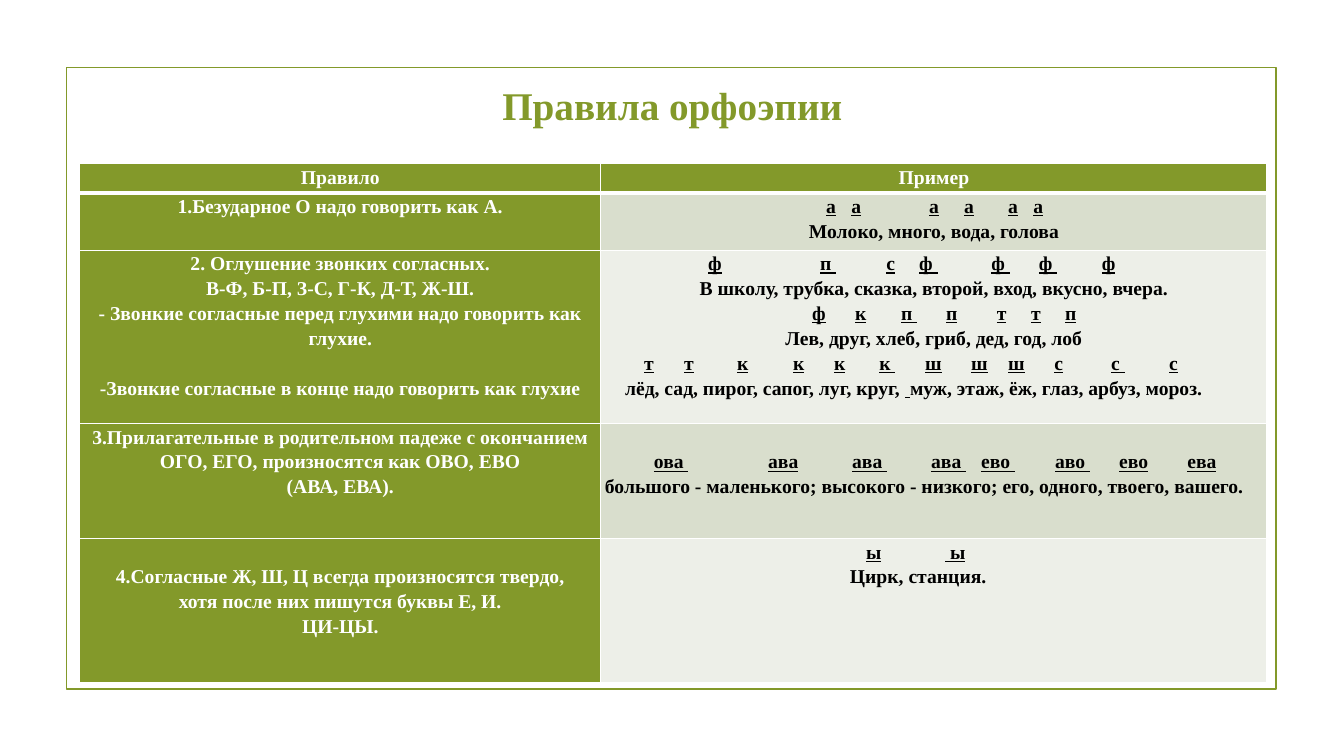
from dataclasses import dataclass
from typing import Optional

from lxml.etree import SubElement
from pptx import Presentation
from pptx.dml.color import RGBColor
from pptx.enum.shapes import MSO_SHAPE
from pptx.enum.text import MSO_ANCHOR, PP_ALIGN
from pptx.oxml import parse_xml
from pptx.oxml.ns import qn
from pptx.util import Pt

COLORS = {"green": "83992A", "white": "FFFFFF", "black": "000000",
          "dark": "D9DECD", "light": "EDEFE8"}
FONT = "Times New Roman"
NS = "http://schemas.openxmlformats.org/drawingml/2006/main"
PITCH = 17.7  # height of one line of table text
WIDTHS = (372.2, 475.9)
HEIGHTS = (20.9, 41, 123.8, 82.1, 103)


@dataclass
class Line:
    """A centred line, or pieces set at tab stops when stops are given."""
    pieces: tuple[str, ...]
    stops: tuple[float, ...] = ()
    under: bool = True
    gap: float = 0


@dataclass
class Cell:
    lines: list[Line]
    top: float = 0


def plain(*texts: str) -> list[Line]:
    return [Line((text,)) for text in texts]


def sounds(text: str, *stops: float) -> Line:
    """Underlined sounds, split at bars, each above its letter."""
    return Line(tuple(text.split("|")), stops)


ROWS = [
    (Cell(plain("Правило")), Cell(plain("Пример"))),
    (Cell(plain("1.Безударное О надо говорить как А.")),
     Cell([sounds("а|а|а|а|а|а", 158, 176, 231.5, 256.5, 288, 306),
           *plain("Молоко, много, вода, голова")])),
    (Cell([*plain("2. Оглушение звонких согласных.",
                  "В-Ф, Б-П, З-С, Г-К, Д-Т, Ж-Ш.",
                  "- Звонкие согласные перед глухими надо говорить как глухие."),
           Line(("-Звонкие согласные в конце надо говорить как глухие",), gap=PITCH)]),
     Cell([sounds("ф|п |с|ф |ф |ф |ф", 73.7, 153.7, 201, 224.4, 276, 310, 355),
           *plain("В школу, трубка, сказка, второй, вход, вкусно, вчера."),
           sounds("ф|к|п |п|т|т|п", 148, 178.7, 211.6, 243.7, 280, 304.4, 328.7),
           *plain("Лев, друг, хлеб, гриб, дед, год, лоб"),
           sounds("т|т|к|к|к|к |ш|ш|ш|с|с |с", 28, 56.6, 94.4, 134.4, 163.7, 196,
                  228.7, 261.6, 288, 321, 361.6, 403),
           Line(("лёд, сад, пирог, сапог, луг, круг,",
                 "муж, этаж, ёж, глаз, арбуз, мороз."), (14.4, 214.4), False)])),
    (Cell(plain("3.Прилагательные в родительном падеже с окончанием "
                "ОГО, ЕГО, произносятся как ОВО, ЕВО", "(АВА, ЕВА).")),
     Cell([sounds("ова |ава|ава |ава |ево |аво |ево|ева",
                  35, 116.6, 176.6, 233, 268.7, 321.6, 367.3, 416),
           Line(("большого - маленького; высокого - низкого; "
                 "его, одного, твоего, вашего.",), (0,), False)], PITCH)),
    (Cell(plain("4.Согласные Ж, Ш, Ц всегда произносятся твердо,",
                "хотя после них пишутся буквы Е, И.", "ЦИ-ЦЫ."), PITCH),
     Cell([sounds("ы| ы", 186.6, 243), Line(("Цирк, станция.",), (175,), False)])),
]


def paint(name: str) -> RGBColor:
    return RGBColor.from_string(COLORS[name])


def add_run(para, text: str, color: str, size: float = 14,
            under: Optional[bool] = None) -> None:
    run = para.add_run()
    run.text = text
    font = run.font
    font.name, font.size, font.bold = FONT, Pt(size), True
    font.underline = under
    font.color.rgb = paint(color)


def set_tabs(para, stops: tuple[float, ...]) -> None:
    tabs = SubElement(para._p.get_or_add_pPr(), qn("a:tabLst"))
    for stop in stops:
        SubElement(tabs, qn("a:tab"), pos=str(int(Pt(stop))), algn="l")


def add_line(para, line: Line, color: str) -> None:
    para.line_spacing = 1.15
    para.alignment = PP_ALIGN.LEFT if line.stops else PP_ALIGN.CENTER
    if line.gap:
        para.space_before = Pt(line.gap)
    tabbed = any(line.stops)
    if tabbed:
        set_tabs(para, line.stops)
    for index, piece in enumerate(line.pieces):
        if tabbed:
            add_run(para, "\t", color)
        if index and not line.under:
            add_run(para, " ", color, under=True)
        add_run(para, piece, color, under=tabbed and line.under)


def set_edges(cell, head: bool, below: bool) -> None:
    """White borders, thicker between the header and the body."""
    widths = {"lnL": 1, "lnR": 1, "lnT": 3 if below else 1, "lnB": 3 if head else 1}
    props = cell._tc.get_or_add_tcPr()
    for index, (tag, width) in enumerate(widths.items()):
        props.insert(index, parse_xml(
            f'<a:{tag} xmlns:a="{NS}" w="{int(Pt(width))}"><a:solidFill>'
            f'<a:srgbClr val="{COLORS["white"]}"/></a:solidFill></a:{tag}>'))


def fill_cell(cell, data: Cell, row: int, col: int) -> None:
    green = row == 0 or col == 0
    cell.margin_left = cell.margin_right = Pt(2.9)
    cell.margin_top, cell.margin_bottom = Pt(data.top), Pt(0)
    cell.fill.solid()
    cell.fill.fore_color.rgb = paint("green" if green else "dark" if row % 2 else "light")
    set_edges(cell, row == 0, row == 1)
    frame = cell.text_frame
    for index, line in enumerate(data.lines):
        para = frame.add_paragraph() if index else frame.paragraphs[0]
        add_line(para, line, "white" if green else "black")


def add_frame(slide) -> None:
    box = slide.shapes.add_shape(MSO_SHAPE.RECTANGLE, Pt(47.5), Pt(48.2), Pt(864), Pt(444.2))
    box.shadow.inherit = False
    box.fill.background()
    box.line.color.rgb = paint("green")
    box.line.width = Pt(1.25)


def add_title(slide) -> None:
    box = slide.shapes.add_textbox(Pt(102.2), Pt(58.2), Pt(756), Pt(53.3))
    frame = box.text_frame
    frame.word_wrap = True
    frame.vertical_anchor = MSO_ANCHOR.TOP
    frame.margin_top = frame.margin_bottom = Pt(0)
    para = frame.paragraphs[0]
    para.alignment = PP_ALIGN.CENTER
    add_run(para, "Правила орфоэпии", "green", 28)


def add_rules(slide) -> None:
    table = slide.shapes.add_table(len(ROWS), len(WIDTHS), Pt(57), Pt(116.8),
                                   Pt(sum(WIDTHS)), Pt(sum(HEIGHTS))).table
    table.horz_banding = False
    for col, width in zip(table.columns, WIDTHS):
        col.width = Pt(width)
    for row, height in zip(table.rows, HEIGHTS):
        row.height = Pt(height)
    for row, cells in enumerate(ROWS):
        for col, data in enumerate(cells):
            fill_cell(table.cell(row, col), data, row, col)


def main() -> None:
    deck = Presentation()
    deck.slide_width, deck.slide_height = Pt(960), Pt(540)
    slide = deck.slides.add_slide(deck.slide_layouts[6])
    add_frame(slide)
    add_title(slide)
    add_rules(slide)
    deck.save("out.pptx")


if __name__ == "__main__":
    main()
